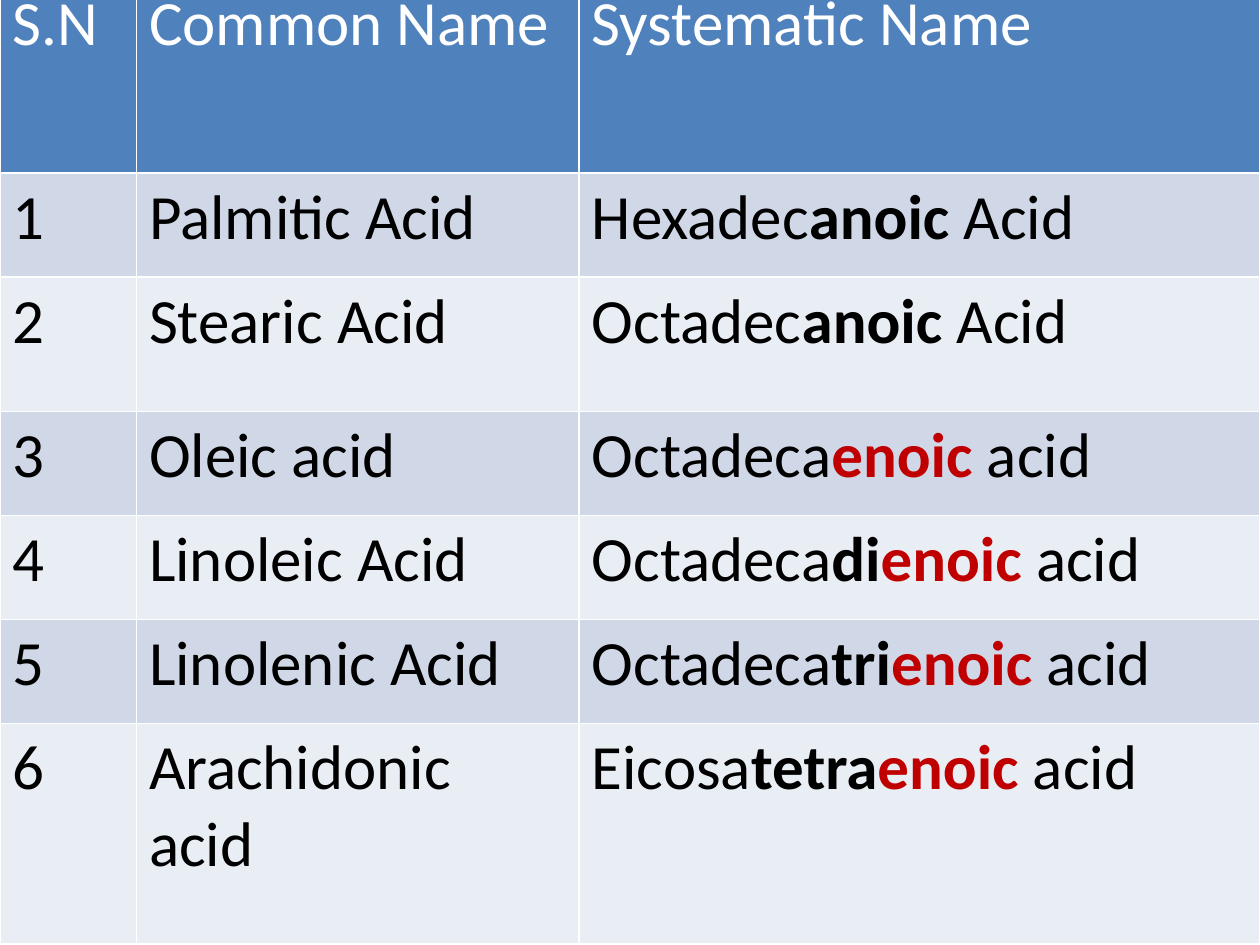
from pptx import Presentation
from pptx.dml.color import RGBColor
from pptx.util import Pt

COLORS = {
    "header": "4F81BD", "odd": "D0D8E8", "even": "E9EDF4",
    "white": "FFFFFF", "black": "000000", "red": "C00000",
}

# Each systematic name: stem, bold black part, bold red part, ending
HEADERS = ("S.N", "Common Name", "Systematic Name")
ACIDS = [
    ("Palmitic Acid", ("Hexadec", "anoic", "", " Acid")),
    ("Stearic Acid", ("Octadec", "anoic", "", " Acid")),
    ("Oleic acid", ("Octadeca", "", "enoic", " acid")),
    ("Linoleic Acid", ("Octadeca", "di", "enoic", " acid")),
    ("Linolenic Acid", ("Octadeca", "tri", "enoic", " acid")),
    ("Arachidonic acid", ("Eicosa", "tetra", "enoic", " acid")),
]
PART_STYLES = [("black", False), ("black", True), ("red", True), ("black", False)]

COL_WIDTHS = (78, 253, 389)
ROW_HEIGHTS = (111, 59.4, 77, 59.4, 59.4, 59.4, 126)
TOP = -12.2


def rgb(name):
    return RGBColor.from_string(COLORS[name])


def fill_cell(cell, parts, fill):
    """Write (text, color, bold) parts into a filled cell."""
    cell.fill.solid()
    cell.fill.fore_color.rgb = rgb(fill)
    p = cell.text_frame.paragraphs[0]
    p.font.name, p.font.size = "Calibri", Pt(36)
    for text, color, bold in parts:
        if text:
            r = p.add_run()
            r.text = text
            r.font.name, r.font.size = "Calibri", Pt(36)
            r.font.bold = bold
            r.font.color.rgb = rgb(color)


prs = Presentation()
prs.slide_width, prs.slide_height = Pt(720), Pt(540)
s = prs.slides.add_slide(prs.slide_layouts[6])

# Table grid
table = s.shapes.add_table(
    len(ROW_HEIGHTS), len(COL_WIDTHS), Pt(0), Pt(TOP),
    Pt(sum(COL_WIDTHS)), Pt(sum(ROW_HEIGHTS))).table
for col, width in zip(table.columns, COL_WIDTHS):
    col.width = Pt(width)
for row, height in zip(table.rows, ROW_HEIGHTS):
    row.height = Pt(height)

# Header row
for c, text in enumerate(HEADERS):
    fill_cell(table.cell(0, c), [(text, "white", False)], "header")

# Acid rows
for n, (common, systematic) in enumerate(ACIDS, start=1):
    fill = "odd" if n % 2 else "even"
    fill_cell(table.cell(n, 0), [(str(n), "black", False)], fill)
    fill_cell(table.cell(n, 1), [(common, "black", False)], fill)
    parts = [(text, *style) for text, style in zip(systematic, PART_STYLES)]
    fill_cell(table.cell(n, 2), parts, fill)

prs.save("out.pptx")
